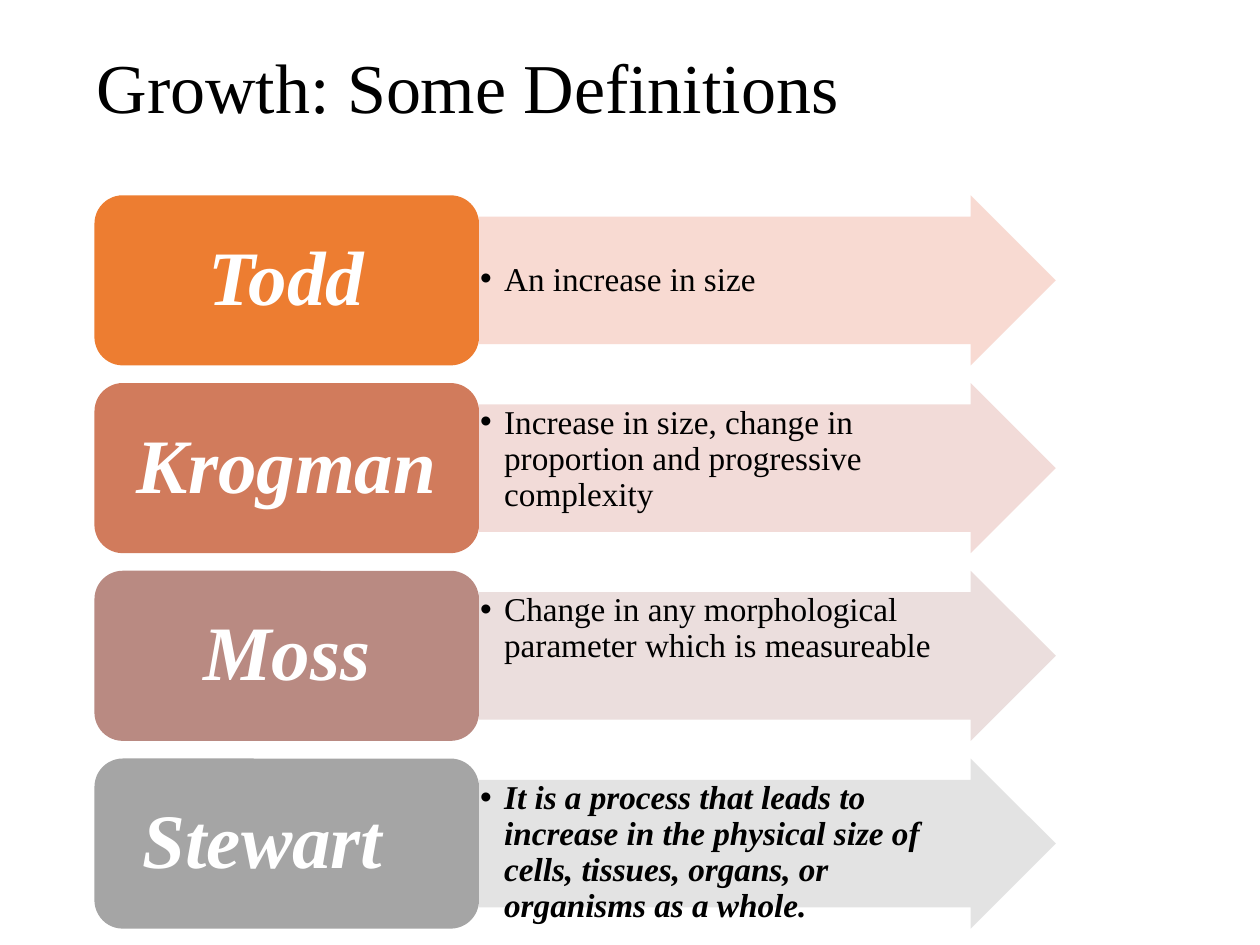
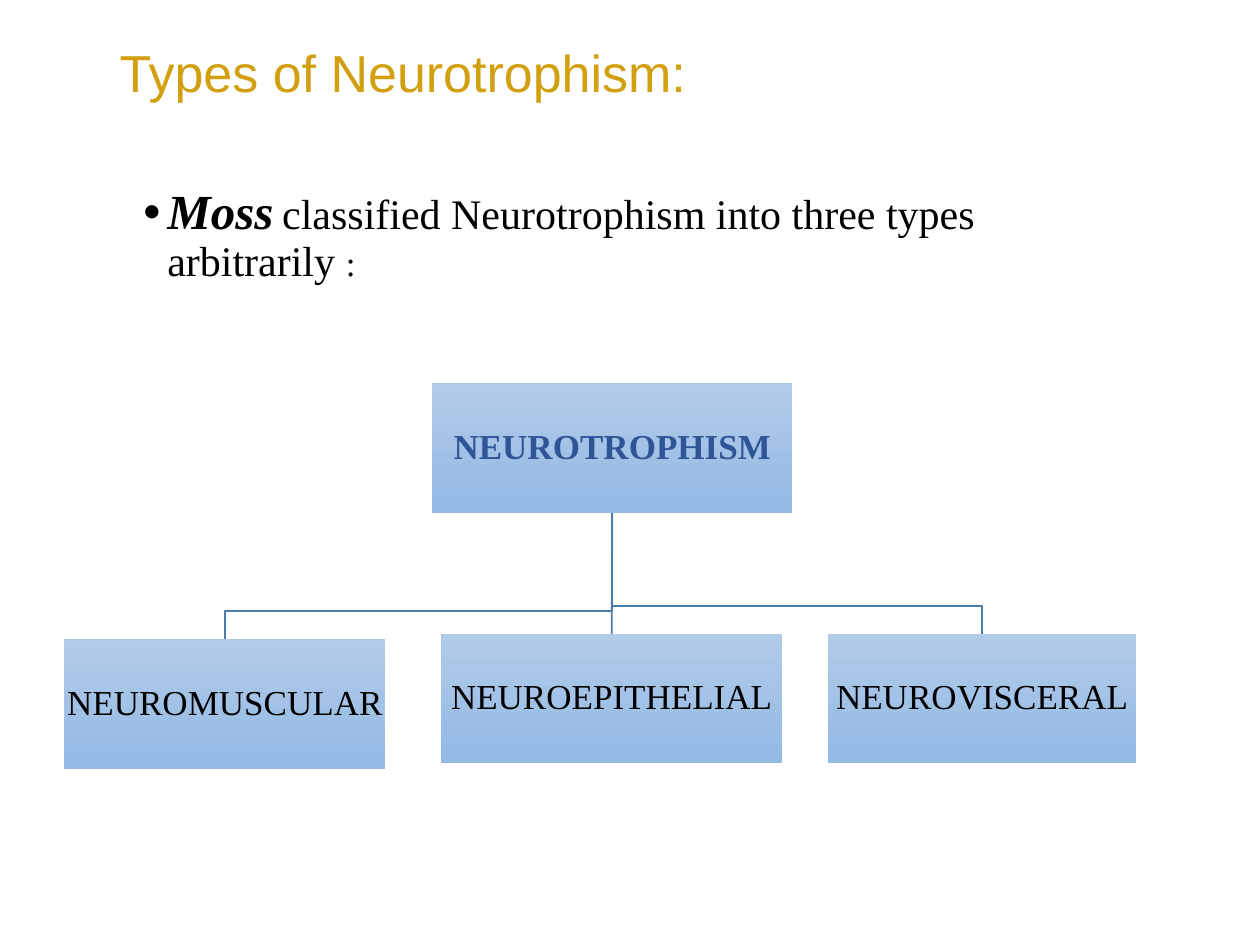
import pptx
import pptx.dml.color
import pptx.enum.shapes
import pptx.enum.text
import pptx.oxml.ns
import pptx.util
from lxml import etree

Inches = pptx.util.Inches
SHAPES = pptx.enum.shapes.MSO_SHAPE
ANCHOR = pptx.enum.text.MSO_ANCHOR
ALIGN = pptx.enum.text.PP_ALIGN

SERIF = "Times New Roman"
SANS = "Arial"
BLACK = "000000"
WHITE = "FFFFFF"
GOLD = "D29F0F"
NAVY = "2F5597"
LINE_BLUE = "497CAB"
BOX_GRADIENT = ("B1CBE9", "93B9E4")
TITLE_LEFT, TITLE_TOP, TITLE_WIDTH = 0.67, 0.21, 6.94

DEFINITIONS = [
    ("Todd", "An increase in size", "ED7D31", "F8D7CE", {"anchor": ANCHOR.MIDDLE}),
    ("Krogman", "Increase in size, change in proportion and progressive complexity",
     "D17B5C", "F1D8D4", {}),
    ("Moss", "Change in any morphological parameter which is measureable",
     "B98A82", "E9DBDA", {}),
    ("Stewart", "It is a process that leads to increase in the physical size of cells, "
     "tissues, organs, or organisms as a whole.", "A5A5A5", "E1E1E1",
     {"emphasis": True, "name_right_inset": 0.56}),
]
NEUROTROPHISM_TYPES = [
    ("NEUROMUSCULAR", (0.51, 5.07, 2.55, 1.03)),
    ("NEUROEPITHELIAL", (3.5, 5.03, 2.71, 1.03)),
    ("NEUROVISCERAL", (6.57, 5.03, 2.45, 1.03)),
]


def rgb(hex_colour):
    return pptx.dml.color.RGBColor.from_string(hex_colour)


def add_child(parent, tag, **attributes):
    return etree.SubElement(parent, pptx.oxml.ns.qn(tag), attributes)


def set_bullet(paragraph, left, hanging):
    properties = paragraph._p.get_or_add_pPr()
    properties.set("marL", str(Inches(left)))
    properties.set("indent", str(-Inches(hanging)))
    add_child(properties, "a:buFont", typeface=SANS)
    add_child(properties, "a:buChar", char="•")


def write(shape, runs, anchor=ANCHOR.TOP, align=ALIGN.LEFT,
          insets=(0.1, 0.05, 0.1, 0.05), bullet=None, line_spacing=0.9):
    """Fill a shape with one paragraph; runs are (text, size, colour, font, extras)."""
    frame = shape.text_frame
    settings = {"word_wrap": True, "vertical_anchor": anchor}
    sides = ("margin_left", "margin_top", "margin_right", "margin_bottom")
    settings.update(zip(sides, map(Inches, insets)))
    for name, value in settings.items():
        setattr(frame, name, value)
    paragraph = frame.paragraphs[0]
    paragraph.alignment = align
    paragraph.line_spacing = line_spacing
    if bullet:
        set_bullet(paragraph, *bullet)
    for text, size, colour, font_name, extras in runs:
        run = paragraph.add_run()
        run.text = text
        formats = {"name": font_name, "size": pptx.util.Pt(size), **extras}
        for name, value in formats.items():
            setattr(run.font, name, value)
        run.font.color.rgb = rgb(colour)


def add_text(slide, box, runs, **options):
    write(slide.shapes.add_textbox(*map(Inches, box)), runs, **options)


def add_title(slide, text, height, size, colour, font_name, **options):
    add_text(slide, (TITLE_LEFT, TITLE_TOP, TITLE_WIDTH, height),
             [(text, size, colour, font_name, {})], anchor=ANCHOR.MIDDLE, **options)


def add_block(slide, kind, box, colour=None):
    """Add a shape without outline or shadow, in one colour or in the box gradient."""
    shape = slide.shapes.add_shape(kind, *map(Inches, box))
    shape.shadow.inherit = False
    shape.line.fill.background()
    if colour:
        shape.fill.solid()
        shape.fill.fore_color.rgb = rgb(colour)
    else:
        shape.fill.gradient()
        shape.fill.gradient_angle = 270
        for stop, stop_colour in zip(shape.fill.gradient_stops, BOX_GRADIENT):
            stop.color.rgb = rgb(stop_colour)
    return shape


def add_definition(slide, box, name, definition, name_colour, arrow_colour,
                   anchor=ANCHOR.TOP, emphasis=False, name_right_inset=0.18):
    left, top, width, height = box
    name_width = 0.4 * width
    arrow = add_block(slide, SHAPES.RIGHT_ARROW,
                      (left + name_width, top, width - name_width, height), arrow_colour)
    arrow.adjustments[0] = 0.75
    colour_element = arrow._element.spPr.find(".//" + pptx.oxml.ns.qn("a:srgbClr"))
    add_child(colour_element, "a:alpha", val="90000")
    style = {"bold": emphasis, "italic": emphasis}
    write(arrow, [(definition, 19, BLACK, SERIF, style)], anchor=anchor,
          insets=(0.01, 0.01, 0.34, 0.01), bullet=(0.19, 0.19))

    name_box = add_block(slide, SHAPES.ROUNDED_RECTANGLE,
                         (left, top, name_width, height), name_colour)
    write(name_box, [(name, 44, WHITE, SERIF, {"bold": True, "italic": True})],
          anchor=ANCHOR.MIDDLE, align=ALIGN.CENTER,
          insets=(0.18, 0.09, name_right_inset, 0.09))


def add_tree_box(slide, box, label, colour=BLACK, bold=False):
    shape = add_block(slide, SHAPES.RECTANGLE, box)
    write(shape, [(label, 20, colour, SERIF, {"bold": bold})], anchor=ANCHOR.MIDDLE,
          align=ALIGN.CENTER, insets=(0.01,) * 4)
    return shape


def add_branch(slide, root, child):
    """Join root to child: straight when they are aligned, else with an elbow."""
    start_x, start_y = root.left + root.width // 2, root.top + root.height
    end_x, end_y = child.left + child.width // 2, child.top
    if abs(end_x - start_x) < Inches(0.05):
        branch = slide.shapes.add_connector(
            pptx.enum.shapes.MSO_CONNECTOR.STRAIGHT, start_x, start_y, end_x, end_y)
        branch.begin_connect(root, 2)
        branch.end_connect(child, 0)
        add_child(branch._element.spPr, "a:effectLst")
    else:
        bend_y = end_y - Inches(0.22)
        builder = slide.shapes.build_freeform(start_x, start_y)
        builder.add_line_segments(
            [(start_x, bend_y), (end_x, bend_y), (end_x, end_y)], close=False)
        branch = builder.convert_to_shape()
        branch.fill.background()
        branch.shadow.inherit = False
    branch.line.color.rgb = rgb(LINE_BLUE)
    branch.line.width = pptx.util.Pt(1)


def add_tree(slide):
    root = add_tree_box(slide, (3.43, 3.04, 2.86, 1.03), "NEUROTROPHISM", NAVY, True)
    for label, box in NEUROTROPHISM_TYPES:
        add_branch(slide, root, add_tree_box(slide, box, label))


def build_definitions_slide(slide):
    add_title(slide, "Growth: Some Definitions", 1.02, 40, BLACK, SERIF)
    left, top, width, height, pitch = 0.75, 1.55, 7.63, 1.35, 1.49
    for row, (name, definition, name_colour, arrow_colour, options) in enumerate(DEFINITIONS):
        add_definition(slide, (left, top + row * pitch, width, height),
                       name, definition, name_colour, arrow_colour, **options)


def build_types_slide(slide):
    add_title(slide, "Types of Neurotrophism:", 0.72, 29.7, GOLD, SANS,
              insets=(0.28, 0.05, 0.1, 0.05), line_spacing=1.0)
    add_text(slide, (TITLE_LEFT, 1.44, 7.33, 1), [
        ("Moss", 28, BLACK, SERIF, {"bold": True, "italic": True}),
        (" ", 20, BLACK, SERIF, {}),
        ("classified Neurotrophism into three types arbitrarily ", 24, BLACK, SERIF, {}),
        (":", 20, BLACK, SERIF, {}),
    ], bullet=(0.56, 0.19))
    add_tree(slide)


def main():
    presentation = pptx.Presentation()
    presentation.slide_width = Inches(10)
    presentation.slide_height = Inches(7.5)
    blank_layout = presentation.slide_layouts[6]
    for build in (build_definitions_slide, build_types_slide):
        build(presentation.slides.add_slide(blank_layout))
    presentation.save("out.pptx")


if __name__ == "__main__":
    main()
